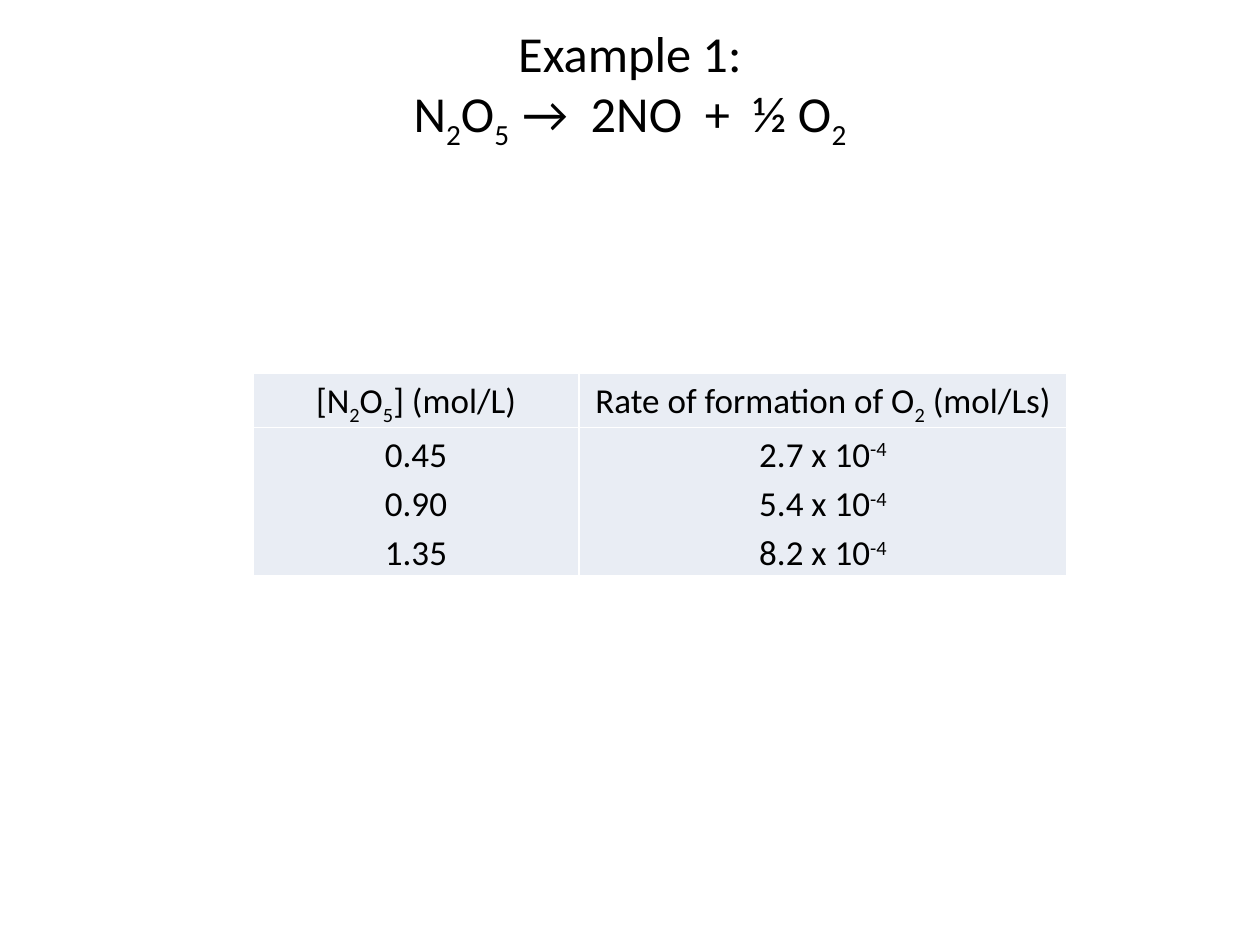
from lxml.etree import SubElement
from pptx import Presentation
from pptx.dml.color import RGBColor
from pptx.enum.text import MSO_ANCHOR, MSO_AUTO_SIZE, PP_ALIGN
from pptx.oxml.ns import qn
from pptx.util import Inches, Pt

FONT = "Calibri"
BLACK, WHITE, PALE = "000000", "FFFFFF", "E9EDF4"
SUB, SUPER = -25, 30
TITLE_SIZE, TABLE_SIZE = 28.8, 20

TITLE_LINES = [
    ["Example 1:"],
    ["N", ("2", SUB), "O", ("5  ", SUB), "→  2NO  +  ½ O", ("2", SUB)],
]
HEADINGS = [
    ["[N", ("2", SUB), "O", ("5", SUB), "] (mol/L)"],
    ["Rate of formation of O", ("2", SUB), " (mol/Ls)"],
]
MEASUREMENTS = [("0.45", "2.7"), ("0.90", "5.4"), ("1.35", "8.2")]


def color(hex_text):
    return RGBColor.from_string(hex_text)


def add_spans(para, parts, size):
    """Add runs; a part is plain text or a (text, baseline shift) pair."""
    para.alignment = PP_ALIGN.CENTER
    for part in parts:
        text, shift = (part, 0) if isinstance(part, str) else part
        span = para.add_run()
        span.text = text
        span.font.name, span.font.size = FONT, Pt(size)
        span.font.color.rgb = color(BLACK)
        if shift:
            span.font._element.set("baseline", str(shift * 1000))


def place(shape, box):
    shape.left, shape.top, shape.width, shape.height = map(Inches, box)


def add_title(page, box):
    # The master's title size also governs the line breaks.
    master = page.slide_layout.slide_master.element
    style = next(master.iter(qn("p:titleStyle")))
    next(style.iter(qn("a:defRPr"))).set("sz", str(round(TITLE_SIZE * 100)))

    title = page.shapes.title
    place(title, box)
    frame = title.text_frame
    frame.auto_size = MSO_AUTO_SIZE.NONE
    frame.vertical_anchor = MSO_ANCHOR.MIDDLE
    para = frame.paragraphs[0]
    for line in TITLE_LINES:
        add_spans(para, line, TITLE_SIZE)
        para.add_line_break()


def add_borders(cell):
    props = cell._tc.get_or_add_tcPr()
    for index, side in enumerate(("lnL", "lnR", "lnT", "lnB")):
        line = props.makeelement(qn(f"a:{side}"), {"w": str(Pt(1))})
        fill = SubElement(line, qn("a:solidFill"))
        SubElement(fill, qn("a:srgbClr"), val=WHITE)
        props.insert(index, line)


def fill_cell(cell, lines):
    cell.margin_left = cell.margin_right = Inches(0.07)
    cell.margin_top = cell.margin_bottom = 0
    cell.fill.solid()
    cell.fill.fore_color.rgb = color(PALE)
    add_borders(cell)
    frame = cell.text_frame
    for index, parts in enumerate(lines):
        para = frame.add_paragraph() if index else frame.paragraphs[0]
        para.line_spacing = 1.15
        add_spans(para, parts, TABLE_SIZE)


def add_rate_table(page, box):
    left, top, width, height = map(Inches, box)
    table = page.shapes.add_table(2, 2, left, top, width, height).table
    for column, share in zip(table.columns, (0.4, 0.6)):
        column.width = round(width * share)
    for row, share in zip(table.rows, (0.27, 0.73)):
        row.height = round(height * share)

    concentrations = [[amount] for amount, _ in MEASUREMENTS]
    rates = [[f"{rate} x 10", ("-4", SUPER)] for _, rate in MEASUREMENTS]
    for index, (heading, values) in enumerate(zip(HEADINGS, (concentrations, rates))):
        fill_cell(table.cell(0, index), [heading])
        fill_cell(table.cell(1, index), values)


def main():
    deck = Presentation()
    deck.slide_width, deck.slide_height = Inches(10), Inches(7.5)
    page = deck.slides.add_slide(deck.slide_layouts[5])
    add_title(page, (0.5, 0.3, 9, 1.25))
    add_rate_table(page, (2.01, 2.96, 6.46, 1.53))
    deck.save("out.pptx")


if __name__ == "__main__":
    main()
